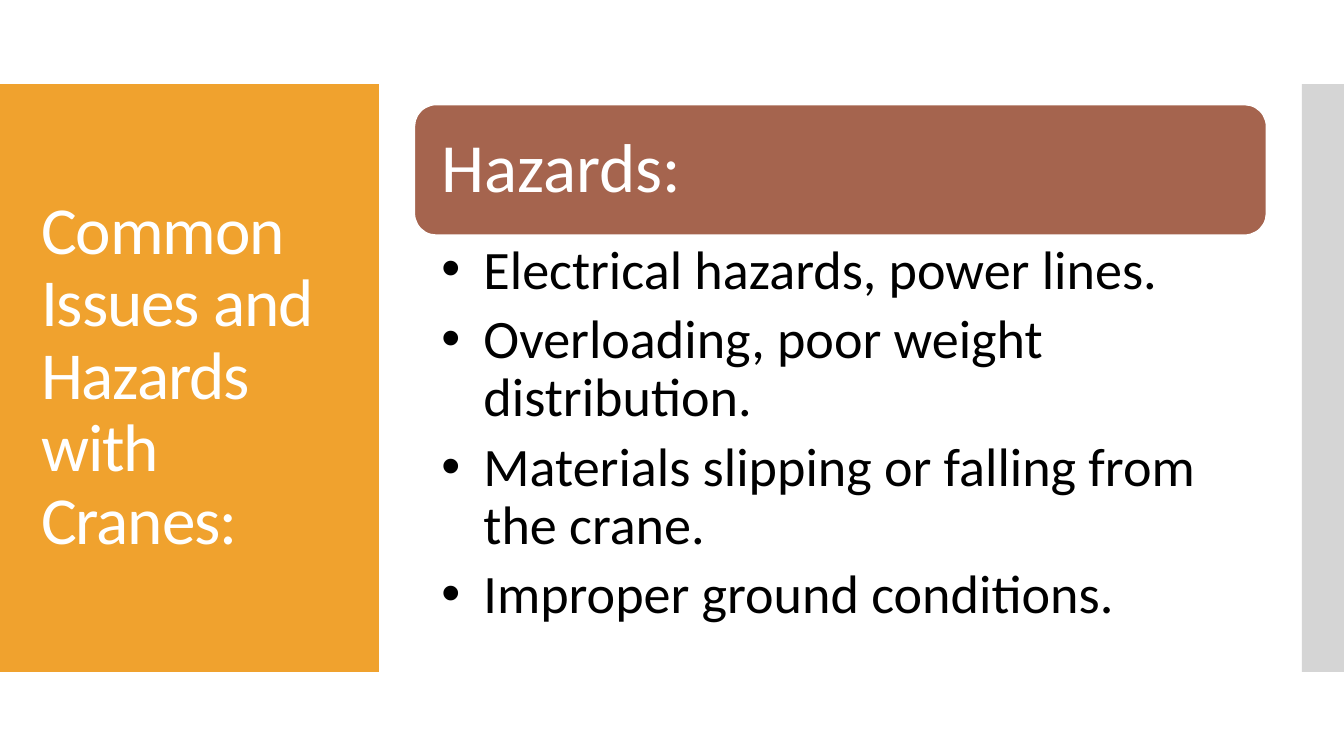
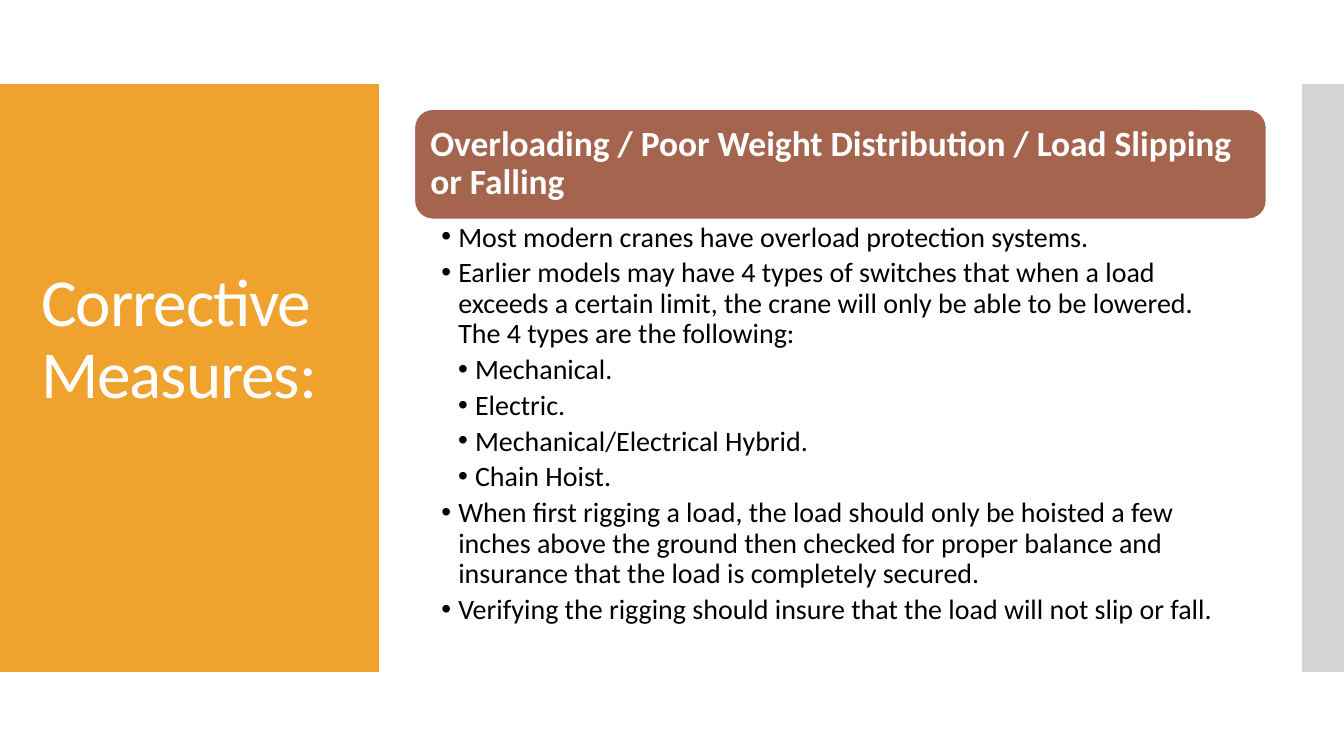
from dataclasses import dataclass

import pptx
import pptx.dml.color
import pptx.enum.shapes
import pptx.enum.text
import pptx.oxml.ns
import pptx.util
from lxml import etree

Pt = pptx.util.Pt
SHAPES = pptx.enum.shapes.MSO_SHAPE
ANCHOR = pptx.enum.text.MSO_ANCHOR
qn = pptx.oxml.ns.qn

# Points are (level, text); header and list insets are in points.
SLIDES = [
    {
        "title": "Common Issues and Hazards with Cranes:",
        "title_lift": 0,
        "header": {"text": "Hazards:", "top": 56, "height": 70, "size": 37,
                   "bold": False, "inset": 11},
        "list": {"height": 223, "size": 29, "indent": 22.5,
                 "insets": (14.5, 3.8, 20.6, 3.8)},
        "points": [
            (1, "Electrical hazards, power lines."),
            (1, "Overloading, poor weight distribution."),
            (1, "Materials slipping or falling from the crane."),
            (1, "Improper ground conditions."),
        ],
    },
    {
        "title": "Corrective Measures:",
        "title_lift": 39.5,
        "header": {"text": "Overloading / Poor Weight Distribution / "
                           "Load Slipping or Falling",
                   "top": 58.5, "height": 59, "size": 19,
                   "bold": True, "inset": 5.7},
        "list": {"height": 229, "size": 15, "indent": 9,
                 "insets": (14.5, 1.9, 10.7, 1.9)},
        "points": [
            (1, "Most modern cranes have overload protection systems."),
            (1, "Earlier models may have 4 types of switches that when a load "
                "exceeds a certain limit, the crane will only be able to be "
                "lowered.  The 4 types are the following:"),
            (2, "Mechanical."),
            (2, "Electric."),
            (2, "Mechanical/Electrical Hybrid."),
            (2, "Chain Hoist."),
            (1, "When first rigging a load, the load should only be hoisted a "
                "few inches above the ground then checked for proper balance "
                "and insurance that the load is completely secured."),
            (1, "Verifying the rigging should insure that the load will not "
                "slip or fall."),
        ],
    },
]


@dataclass(frozen=True)
class Theme:
    font: str = "Calibri"
    title_size: float = 36
    title_tracking: float = -0.6
    line_spacing: float = 0.9
    point_gap: float = 0.2  # share of the type size
    panel: str = "F0A22E"
    header: str = "A5644E"
    edge: str = "C8C8C8"
    edge_opacity: int = 75
    light: str = "FFFFFF"
    dark: str = "000000"


THEME = Theme()
WIDTH, HEIGHT = 720, 405
BAND_TOP, BAND_HEIGHT = 45, 315
PANEL_WIDTH, EDGE_WIDTH = 203, 22.5
TITLE_BOX = (15, 66.5, 174, 271.5)
CONTENT_LEFT, CONTENT_WIDTH = 222, 456.5


def rgb(colour):
    return pptx.dml.color.RGBColor.from_string(colour)


def add_block(slide, kind, box, colour):
    block = slide.shapes.add_shape(kind, *map(Pt, box))
    block.shadow.inherit = False
    block.fill.solid()
    block.fill.fore_color.rgb = rgb(colour)
    block.line.fill.background()
    return block


def set_frame(frame, insets, anchor):
    """Wrap the text; insets run left, top, right, bottom."""
    frame.word_wrap = True
    frame.vertical_anchor = anchor
    (frame.margin_left, frame.margin_top,
     frame.margin_right, frame.margin_bottom) = map(Pt, insets)


def style(paragraph, size, colour, bold=False):
    paragraph.alignment = pptx.enum.text.PP_ALIGN.LEFT
    paragraph.line_spacing = THEME.line_spacing
    for run in paragraph.runs:
        run.font.name = THEME.font
        run.font.size = Pt(size)
        run.font.bold = bold
        run.font.color.rgb = rgb(colour)


def add_bullet(paragraph, level, indent):
    properties = paragraph._p.get_or_add_pPr()
    properties.set("marL", str(Pt(indent * level)))
    properties.set("indent", str(-Pt(indent)))
    etree.SubElement(properties, qn("a:buFont")).set("typeface", "Arial")
    etree.SubElement(properties, qn("a:buChar")).set("char", "•")


def add_bands(slide):
    add_block(slide, SHAPES.RECTANGLE,
              (0, BAND_TOP, PANEL_WIDTH, BAND_HEIGHT), THEME.panel)
    edge = add_block(slide, SHAPES.RECTANGLE,
                     (WIDTH - EDGE_WIDTH, BAND_TOP, EDGE_WIDTH, BAND_HEIGHT),
                     THEME.edge)
    colour = edge._element.spPr.find(qn("a:solidFill"))[0]
    etree.SubElement(colour, qn("a:alpha")).set(
        "val", str(THEME.edge_opacity * 1000))


def add_title(slide, text, lift):
    frame = slide.shapes.add_textbox(*map(Pt, TITLE_BOX)).text_frame
    set_frame(frame, (7.2, 3.6, 7.2, 3.6 + lift), ANCHOR.MIDDLE)
    frame.text = text
    style(frame.paragraphs[0], THEME.title_size, THEME.light)
    for run in frame.paragraphs[0].runs:
        run._r.get_or_add_rPr().set("spc", str(round(THEME.title_tracking * 100)))


def add_header(slide, header):
    bar = add_block(slide, SHAPES.ROUNDED_RECTANGLE,
                    (CONTENT_LEFT, header["top"], CONTENT_WIDTH,
                     header["height"]), THEME.header)
    bar.line.color.rgb = rgb(THEME.light)
    bar.line.width = Pt(0.85)
    set_frame(bar.text_frame, [header["inset"]] * 4, ANCHOR.MIDDLE)
    bar.text_frame.text = header["text"]
    style(bar.text_frame.paragraphs[0], header["size"], THEME.light,
          header["bold"])


def add_points(slide, points, layout, top):
    frame = slide.shapes.add_textbox(
        Pt(CONTENT_LEFT), Pt(top), Pt(CONTENT_WIDTH),
        Pt(layout["height"])).text_frame
    set_frame(frame, layout["insets"], ANCHOR.TOP)
    frame.text = "\n".join(text for _, text in points)
    for paragraph, (level, _) in zip(frame.paragraphs, points):
        paragraph.level = level
        style(paragraph, layout["size"], THEME.dark)
        paragraph.space_after = Pt(layout["size"] * THEME.point_gap)
        add_bullet(paragraph, level, layout["indent"])


def main():
    deck = pptx.Presentation()
    deck.slide_width, deck.slide_height = Pt(WIDTH), Pt(HEIGHT)
    for content in SLIDES:
        slide = deck.slides.add_slide(deck.slide_layouts[6])
        header = content["header"]
        add_bands(slide)
        add_title(slide, content["title"], content["title_lift"])
        add_header(slide, header)
        add_points(slide, content["points"], content["list"],
                   header["top"] + header["height"])
    deck.save("out.pptx")


if __name__ == "__main__":
    main()
